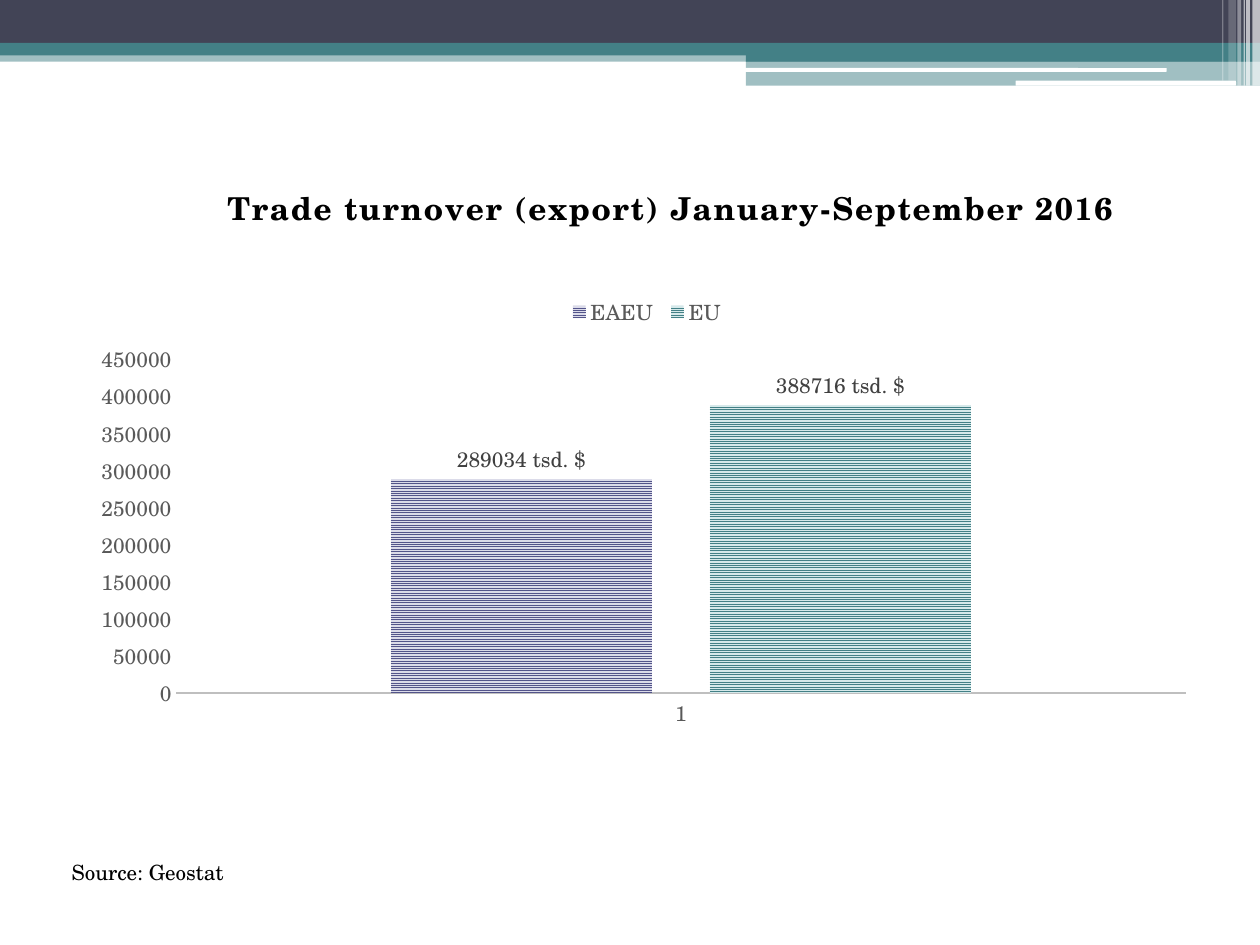
from lxml.etree import SubElement
from pptx import Presentation
from pptx.chart.data import CategoryChartData
from pptx.dml.color import RGBColor
from pptx.enum.chart import XL_CHART_TYPE, XL_LABEL_POSITION, XL_LEGEND_POSITION, XL_TICK_MARK
from pptx.enum.dml import MSO_PATTERN
from pptx.enum.shapes import MSO_SHAPE
from pptx.oxml import parse_xml
from pptx.oxml.ns import nsdecls, qn
from pptx.util import Inches, Pt

FONT = "TeX Gyre Schola"
HUES = {
    "navy": "424456", "teal": "438086", "white": "FFFFFF", "black": "000000",
    "grey": "595959", "dark": "404040", "rule": "BFBFBF",
    "plum": "53548A", "lilac": "DBDBE9", "mint": "D6E9EA",
}


def hue(name):
    return RGBColor.from_string(HUES[name])


def style(font, size, tint, bold=False):
    font.name = FONT
    font.size = Pt(size)
    font.bold = bold
    font.color.rgb = hue(tint)


def add_bar(slide, box, part, tint, alpha=100, kind=MSO_SHAPE.RECTANGLE):
    left, top, wide, high = part
    bar = slide.shapes.add_shape(
        kind, Inches(box[0] + left), Inches(box[1] + top), Inches(wide), Inches(high))
    bar.shadow.inherit = False
    bar.line.fill.background()
    bar.fill.solid()
    bar.fill.fore_color.rgb = hue(tint)
    if alpha < 100:
        tone = bar.fill._xPr.find(qn("a:solidFill"))[0]
        SubElement(tone, qn("a:alpha"), val=str(alpha * 1000))


def add_banner(slide, box):
    wide, high = box[2:]
    half = 5.92
    for part, tint, alpha in [
        ((0, 0.4, wide, 0.09), "teal", 50),
        ((0, 0, wide, 0.34), "navy", 100),
        ((0, 0.34, wide, 0.1), "teal", 100),
        ((half, 0.39, wide - half, 0.1), "teal", 100),
        ((half, 0.48, wide - half, 0.2), "teal", 50),
    ]:
        add_bar(slide, box, part, tint, alpha)
    for part in [(5.91, 0.54, 3.35, 0.03), (8.06, 0.64, 1.75, 0.04)]:
        add_bar(slide, box, part, "white", kind=MSO_SHAPE.ROUNDED_RECTANGLE)
    for left, thick, drop, alpha in [
        (9.94, 0.06, high, 65), (9.89, 0.03, high, 65), (9.87, 0.01, high, 60),
        (9.82, 0.03, high, 40), (9.75, 0.06, 0.64, 20), (9.7, 0.01, 0.64, 30),
    ]:
        add_bar(slide, box, (left, 0, thick, drop), "white", alpha)


def place(node, index, spots):
    for old in node.findall(qn("c:layout")):
        node.remove(old)
    layout = parse_xml(f"<c:layout {nsdecls('c')}><c:manualLayout/></c:layout>")
    for tag, val in spots.items():
        SubElement(layout[0], qn(f"c:{tag}"), val=str(val))
    node.insert(index, layout)


def add_title(chart):
    chart.has_title = True
    run = chart.chart_title.text_frame.paragraphs[0].add_run()
    run.text = "Trade turnover (export) January-September 2016"
    style(run.font, 18, "black", True)
    run.font._element.set("spc", "100")


def style_axes(chart):
    for axis in (chart.category_axis, chart.value_axis):
        axis.has_major_gridlines = False
        axis.major_tick_mark = axis.minor_tick_mark = XL_TICK_MARK.NONE
        style(axis.tick_labels.font, 12, "grey")
    line = chart.category_axis.format.line
    line.color.rgb = hue("rule")
    line.width = Pt(1.5)
    chart.value_axis.format.line.fill.background()
    chart.value_axis.minimum_scale = 0
    chart.value_axis.maximum_scale = 450000
    chart.value_axis.major_unit = 50000


def style_bars(plot):
    plot.gap_width = 164
    plot.overlap = -22
    plot.vary_by_categories = False
    for series, (fore, back) in zip(plot.series, [("plum", "lilac"), ("teal", "mint")]):
        fill = series.format.fill
        fill.patterned()
        fill.pattern = MSO_PATTERN.NARROW_HORIZONTAL
        fill.fore_color.rgb = hue(fore)
        fill.back_color.rgb = hue(back)
        labels = series.data_labels
        labels.show_value = True
        labels.position = XL_LABEL_POSITION.OUTSIDE_END
        labels.number_format = '0" tsd. $"'
        labels.number_format_is_linked = False
        style(labels.font, 12, "dark")


def add_graph(slide, box):
    data = CategoryChartData()
    data.categories = ["1"]
    data.add_series("EAEU", [289034])
    data.add_series("EU", [388716])
    chart = slide.shapes.add_chart(
        XL_CHART_TYPE.COLUMN_CLUSTERED, *map(Inches, box), data).chart
    style(chart.font, 10, "black")
    add_title(chart)
    chart.has_legend = True
    chart.legend.position = XL_LEGEND_POSITION.TOP
    chart.legend.include_in_layout = False
    style(chart.legend.font, 12, "grey")
    style_axes(chart)
    style_bars(chart.plots[0])
    root = chart._chartSpace.chart
    edge = {"xMode": "edge", "yMode": "edge"}
    place(root.find(qn("c:title")), 1, {**edge, "x": 0.13, "y": 0.05})
    place(root.find(qn("c:legend")), 1, {**edge, "x": 0.43, "y": 0.25, "w": 0.15, "h": 0.06})
    place(root.plotArea, 0, {
        "layoutTarget": "inner", **edge, "x": 0.09, "y": 0.36, "w": 0.89, "h": 0.56})


def add_source(slide, box):
    frame = slide.shapes.add_textbox(*map(Inches, box)).text_frame
    frame.word_wrap = True
    frame.margin_top = Inches(0.47)
    para = frame.paragraphs[0]
    para.space_before = Pt(3)
    para._p.get_or_add_pPr().set("marL", str(Inches(0.12)))
    run = para.add_run()
    run.text = "Source: Geostat"
    style(run.font, 12, "black")


def main():
    deck = Presentation()
    deck.slide_width = Inches(10)
    deck.slide_height = Inches(7.5)
    slide = deck.slides.add_slide(deck.slide_layouts[6])
    add_banner(slide, (0, 0, 10, 0.68))
    add_source(slide, (0.35, 6.35, 9, 1.02))
    add_graph(slide, (0.59, 1.15, 9, 4.73))
    deck.save("out.pptx")


if __name__ == "__main__":
    main()
